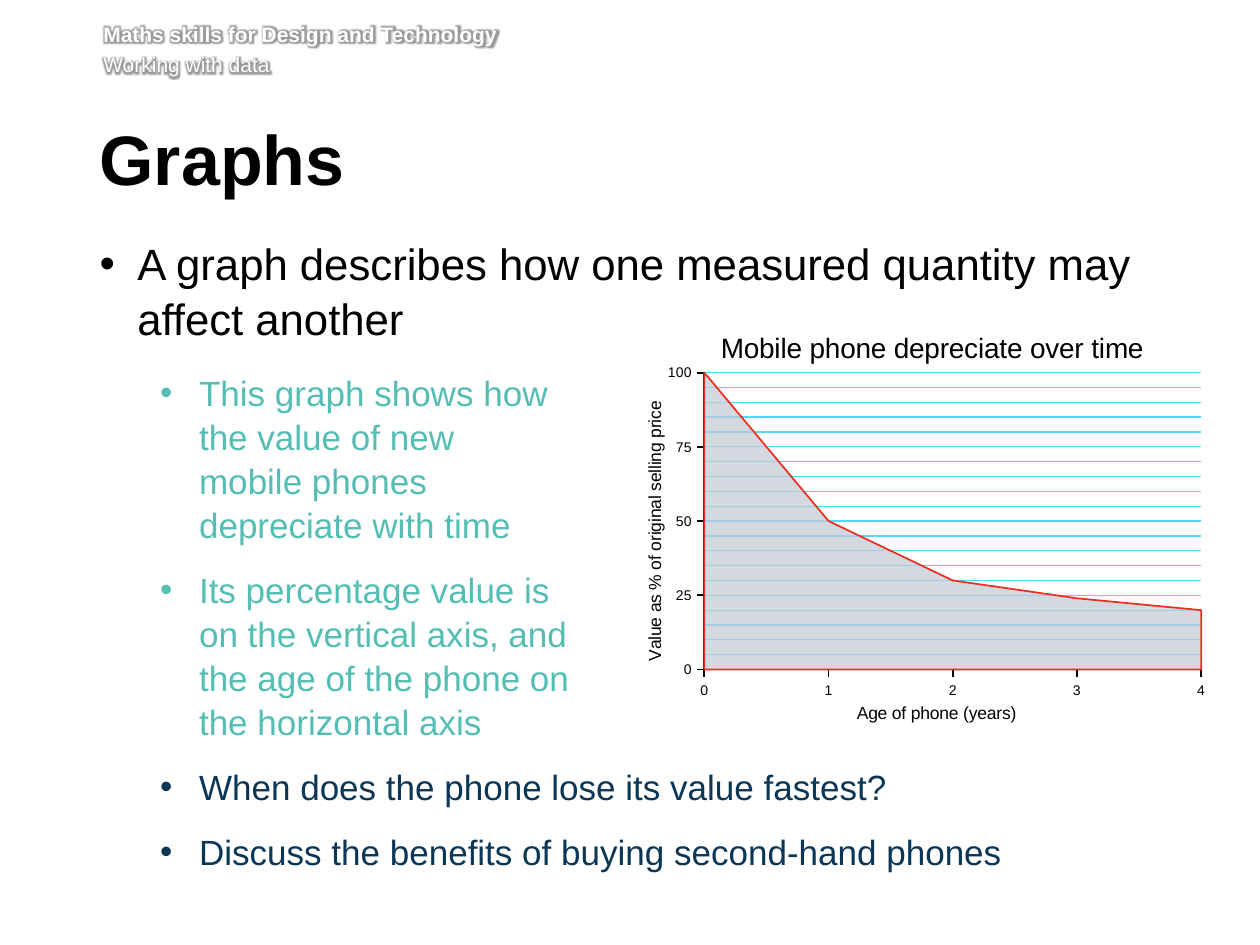
from copy import deepcopy
from dataclasses import dataclass

from lxml import etree
from pptx import Presentation
from pptx import util as u
from pptx.chart import data as chart_data
from pptx.dml.color import RGBColor
from pptx.enum import chart as chart_enum, text
from pptx.oxml import ns


@dataclass(frozen=True)
class Theme:
    font: str = "Arial"
    black: str = "000000"
    white: str = "FFFFFF"
    teal: str = "55BEB4"
    navy: str = "0B3655"
    grid: str = "55D6FF"
    area: str = "C4CAD7"
    area_line: str = "EC2F1E"
    title_size: int = 40
    lead_size: int = 25
    point_size: int = 20
    header_size: int = 12
    chart_title_size: int = 16
    axis_title_size: int = 10
    tick_size: int = 8


theme = Theme()


def add_element(parent, tag, **attributes):
    return etree.SubElement(parent, ns.qn(tag), attributes)


def write(frame, words, size, color=theme.black, bold=False, first=True, before=None,
          after=None, line=None, indent=None, level=0, glow=False):
    paragraph = frame.paragraphs[0] if first else frame.add_paragraph()
    paragraph.text = words
    paragraph.level = level
    paragraph.alignment = text.PP_ALIGN.LEFT
    if before is not None:
        paragraph.space_before = u.Pt(before)
    if after is not None:
        paragraph.space_after = u.Pt(after)
    if line is not None:
        paragraph.line_spacing = line
    if indent:
        properties = paragraph._p.get_or_add_pPr()
        properties.set("marL", str(u.Inches(indent[0])))
        properties.set("indent", str(u.Inches(indent[1])))
        add_element(properties, "a:buFont", typeface=theme.font)
        add_element(properties, "a:buChar", char="•")
    for run in paragraph.runs:
        run.font.size = u.Pt(size)
        run.font.bold = bold
        run.font.color.rgb = RGBColor.from_string(color)
        if glow:
            effects = etree.Element(ns.qn("a:effectLst"))
            halo = add_element(effects, "a:glow", rad=str(u.Pt(5)))
            halo_color = add_element(halo, "a:srgbClr", val=theme.black)
            add_element(halo_color, "a:alpha", val="40000")
            run.font._element.find(ns.qn("a:solidFill")).addnext(effects)
        run.font.name = theme.font


presentation = Presentation()
presentation.slide_width = u.Inches(10)
presentation.slide_height = u.Inches(7.5)
slide = presentation.slides.add_slide(presentation.slide_layouts[5])

title = slide.shapes.title
header = slide.shapes.add_textbox(0, 0, 0, 0)
body = slide.shapes.add_textbox(0, 0, 0, 0)
for shape, box, insets in (
    (header, (0.82, 0.17, 8.82, 0.49), (0, 0, 0, 0.05)),
    (title, (0.79, 0.99, 8.55, 0.73), (0, 0.05, 0.1, 0.05)),
    (body, (0.79, 1.86, 8.53, 3.78), (0, 0, 0.1, 0.05)),
):
    shape.left, shape.top, shape.width, shape.height = map(u.Inches, box)
    frame = shape.text_frame
    frame.word_wrap = True
    frame.auto_size = text.MSO_AUTO_SIZE.NONE
    frame.vertical_anchor = text.MSO_ANCHOR.TOP
    frame.margin_left, frame.margin_top, frame.margin_right, frame.margin_bottom = map(u.Inches, insets)

write(header.text_frame, "Maths skills for Design and Technology", theme.header_size,
      theme.white, bold=True, glow=True)
write(header.text_frame, "Working with data", theme.header_size, theme.white,
      first=False, before=2.9, glow=True)
write(title.text_frame, "Graphs", theme.title_size, bold=True, before=0, after=15, line=u.Pt(39))
write(body.text_frame, "A graph describes how one measured quantity may affect another",
      theme.lead_size, after=14, line=1.05, indent=(0.3, -0.3))
for words, color in (
    ("This graph shows how\nthe value of new\nmobile phones\ndepreciate with time", theme.teal),
    ("Its percentage value is\non the vertical axis, and\nthe age of the phone on\nthe horizontal axis", theme.teal),
    ("When does the phone lose its value fastest?", theme.navy),
    ("Discuss the benefits of buying second-hand phones", theme.navy),
):
    write(body.text_frame, words, theme.point_size, color, first=False, after=12,
          line=1.05, indent=(0.79, -0.31), level=1)

values = chart_data.CategoryChartData()
values.categories = ["0", "1", "2", "3", "4"]
values.add_series("Series 1", (100, 50, 30, 24, 20))
chart = slide.shapes.add_chart(
    chart_enum.XL_CHART_TYPE.AREA, u.Inches(5.08), u.Inches(2.46),
    u.Inches(4.64), u.Inches(3.32), values).chart
chart.has_legend = False
chart.font.name = theme.font
chart.font.size = u.Pt(theme.axis_title_size)
chart.font.color.rgb = RGBColor.from_string(theme.black)
chart.has_title = True
write(chart.chart_title.text_frame, "Mobile phone depreciate over time", theme.chart_title_size)
chart.chart_title.include_in_layout = False

plot = chart.plots[0]
plot.vary_by_categories = False
series = plot.series[0]
series.format.fill.solid()
series.format.fill.fore_color.rgb = RGBColor.from_string(theme.area)
fill_color = series._element.find(".//" + ns.qn("a:srgbClr"))
add_element(fill_color, "a:alpha", val="73000")
series.format.line.color.rgb = RGBColor.from_string(theme.area_line)
series.format.line.width = u.Pt(1)

for axis, words in ((chart.category_axis, "Age of phone (years)"),
                    (chart.value_axis, "Value as % of original selling price")):
    write(axis.axis_title.text_frame, words, theme.axis_title_size)
    axis.major_tick_mark = chart_enum.XL_TICK_MARK.OUTSIDE
    axis.minor_tick_mark = chart_enum.XL_TICK_MARK.NONE
    axis.tick_labels.font.size = u.Pt(theme.tick_size)
    axis.tick_labels.font.name = theme.font
    axis.tick_labels.font.color.rgb = RGBColor.from_string(theme.black)
    axis.format.line.color.rgb = RGBColor.from_string(theme.black)
    axis.format.line.width = u.Pt(1)

chart.category_axis.has_major_gridlines = False
value_axis = chart.value_axis
value_axis.minimum_scale, value_axis.maximum_scale = 0, 100
value_axis.major_unit, value_axis.minor_unit = 25, 5
value_axis.has_major_gridlines = True
value_axis.has_minor_gridlines = False
grid_line = value_axis.major_gridlines.format.line
grid_line.color.rgb = RGBColor.from_string(theme.grid)
grid_line.width = u.Pt(0.75)
major_grid = value_axis._element.find(ns.qn("c:majorGridlines"))
minor_grid = etree.Element(ns.qn("c:minorGridlines"))
minor_grid.extend(deepcopy(list(major_grid)))
major_grid.addnext(minor_grid)
value_axis._element.find(ns.qn("c:crossBetween")).set("val", "midCat")

plot_area = plot._element.getparent()
for old_layout in plot_area.findall(ns.qn("c:layout")):
    plot_area.remove(old_layout)
layout = etree.Element(ns.qn("c:layout"))
plot_area.insert(0, layout)
manual = add_element(layout, "c:manualLayout")
for tag, value in (("layoutTarget", "inner"), ("xMode", "edge"), ("yMode", "edge"),
                   ("x", "0.11"), ("y", "0.15"), ("w", "0.85"), ("h", "0.71")):
    add_element(manual, "c:" + tag, val=value)

presentation.save("out.pptx")
